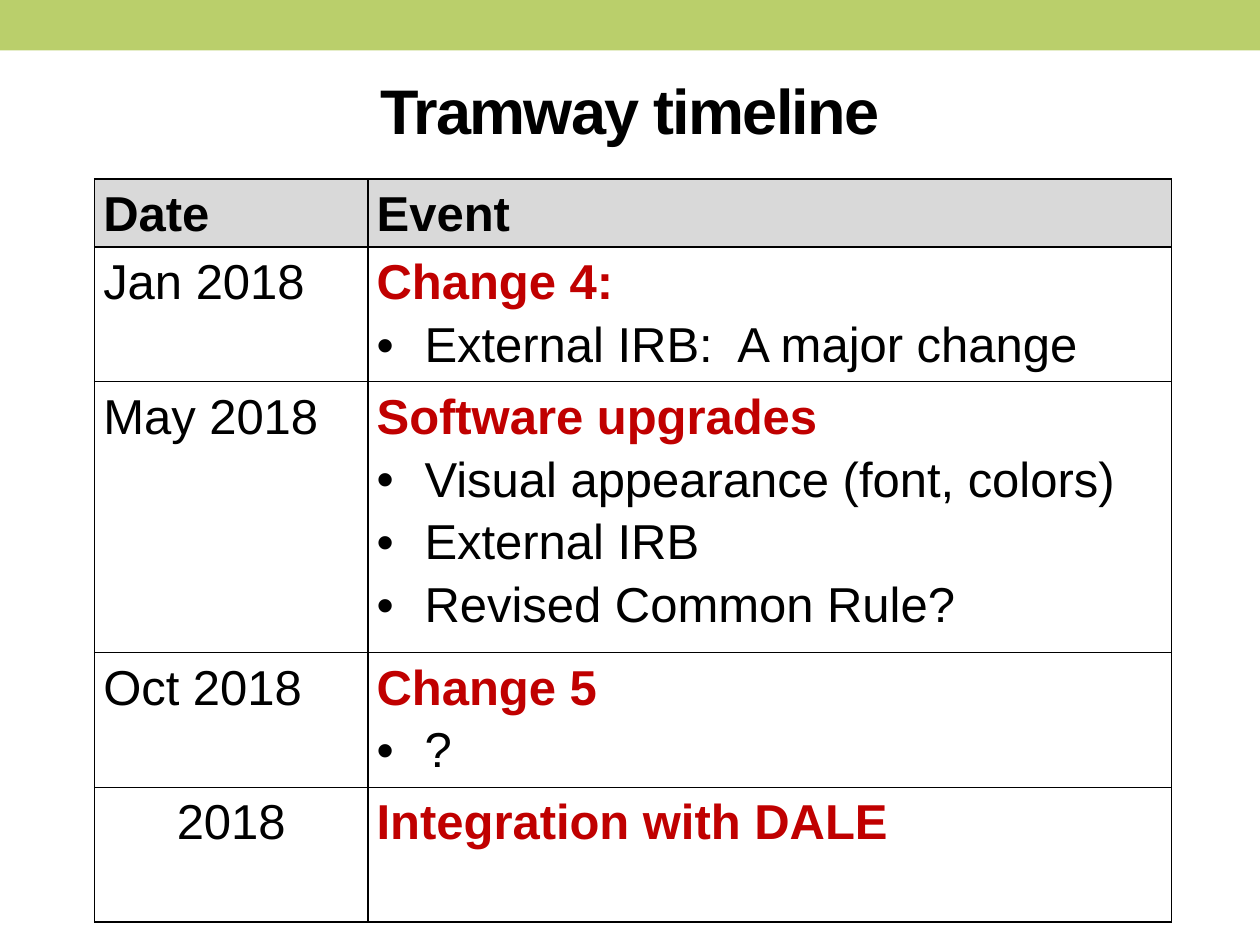
"""Build a slide with a titled timeline table."""
from typing import NamedTuple

from lxml.etree import SubElement
from pptx import Presentation
from pptx.dml.color import RGBColor
from pptx.enum.shapes import MSO_SHAPE
from pptx.enum.text import MSO_ANCHOR, MSO_AUTO_SIZE, PP_ALIGN
from pptx.oxml import parse_xml
from pptx.oxml.ns import nsdecls, qn
from pptx.util import Inches, Pt

BLACK, RED, GREY, GREEN = "000000", "C00000", "D9D9D9", "BACF6B"


class Event(NamedTuple):
    date: str
    head: str
    points: tuple[str, ...]
    height: float
    align: PP_ALIGN = PP_ALIGN.LEFT


EVENTS = [
    Event("Jan 2018", "Change 4:", ("External IRB:  A major change",), 1.07),
    Event("May 2018", "Software upgrades",
          ("Visual appearance (font, colors)", "External IRB", "Revised Common Rule?"), 2.15),
    Event("Oct 2018", "Change 5", ("?",), 1.07),
    Event("2018", "Integration with DALE", (), 1.07, PP_ALIGN.CENTER),
]


def paint(fill, color: str) -> None:
    fill.solid()
    fill.fore_color.rgb = RGBColor.from_string(color)


def style(para, size: float, color: str = BLACK, bold: bool = False) -> None:
    for run in para.runs:
        run.font.name = "Arial"
        run.font.size = Pt(size)
        run.font.bold = bold
        run.font.color.rgb = RGBColor.from_string(color)


def add_bar(slide) -> None:
    bar = slide.shapes.add_shape(MSO_SHAPE.RECTANGLE, 0, 0, Inches(10), Inches(0.4))
    bar.shadow.inherit = False
    paint(bar.fill, GREEN)
    bar.line.fill.background()


def set_title(slide, text: str) -> None:
    title = slide.shapes.title
    title.left, title.top = Inches(0.5), Inches(0.58)
    title.width, title.height = Inches(9), Inches(0.58)
    frame = title.text_frame
    frame.text = text
    frame.auto_size = MSO_AUTO_SIZE.NONE
    frame.vertical_anchor = MSO_ANCHOR.MIDDLE
    para = frame.paragraphs[0]
    para.alignment = PP_ALIGN.CENTER
    style(para, 36, bold=True)
    para.runs[0].font._element.set("spc", "-100")


def frame_cell(cell) -> None:
    props = cell._tc.get_or_add_tcPr()
    for spot, side in enumerate(("lnL", "lnR", "lnT", "lnB")):
        props.insert(spot, parse_xml(
            f'<a:{side} {nsdecls("a")} w="{Pt(1)}"><a:solidFill>'
            f'<a:srgbClr val="{BLACK}"/></a:solidFill></a:{side}>'))


def add_bullet(para) -> None:
    props = para._p.get_or_add_pPr()
    props.set("marL", str(Inches(0.38)))
    props.set("indent", str(-Inches(0.38)))
    SubElement(props, qn("a:buFont"), typeface="Arial")
    SubElement(props, qn("a:buChar"), char="•")


def fill_cell(cell, head: str, points: tuple[str, ...] = (), color: str = BLACK,
              bold: bool = False, align: PP_ALIGN = PP_ALIGN.LEFT, back: str = "") -> None:
    cell.margin_left = cell.margin_right = Inches(0.07)
    cell.margin_top = cell.margin_bottom = 0
    if back:
        paint(cell.fill, back)
    else:
        cell.fill.background()
    frame_cell(cell)
    cell.text_frame.text = "\n".join((head, *points))
    for spot, para in enumerate(cell.text_frame.paragraphs):
        para.line_spacing = 1.15
        para.alignment = align
        if spot:
            add_bullet(para)
            style(para, 28)
        else:
            style(para, 28, color, bold)


def add_events(slide) -> None:
    heights = [0.54] + [event.height for event in EVENTS]
    table = slide.shapes.add_table(
        len(heights), 2, Inches(0.75), Inches(1.42), Inches(8.55), Inches(sum(heights))).table
    for col, width in zip(table.columns, (2.17, 6.38)):
        col.width = Inches(width)
    for row, height in zip(table.rows, heights):
        row.height = Inches(height)
    for col, name in enumerate(("Date", "Event")):
        fill_cell(table.cell(0, col), name, bold=True, back=GREY)
    for row, event in enumerate(EVENTS, 1):
        fill_cell(table.cell(row, 0), event.date, align=event.align)
        fill_cell(table.cell(row, 1), event.head, event.points, RED, True)


def main() -> None:
    deck = Presentation()
    deck.slide_width, deck.slide_height = Inches(10), Inches(7.5)
    slide = deck.slides.add_slide(deck.slide_layouts[5])
    add_bar(slide)
    set_title(slide, "Tramway timeline")
    add_events(slide)
    deck.save("out.pptx")


if __name__ == "__main__":
    main()
